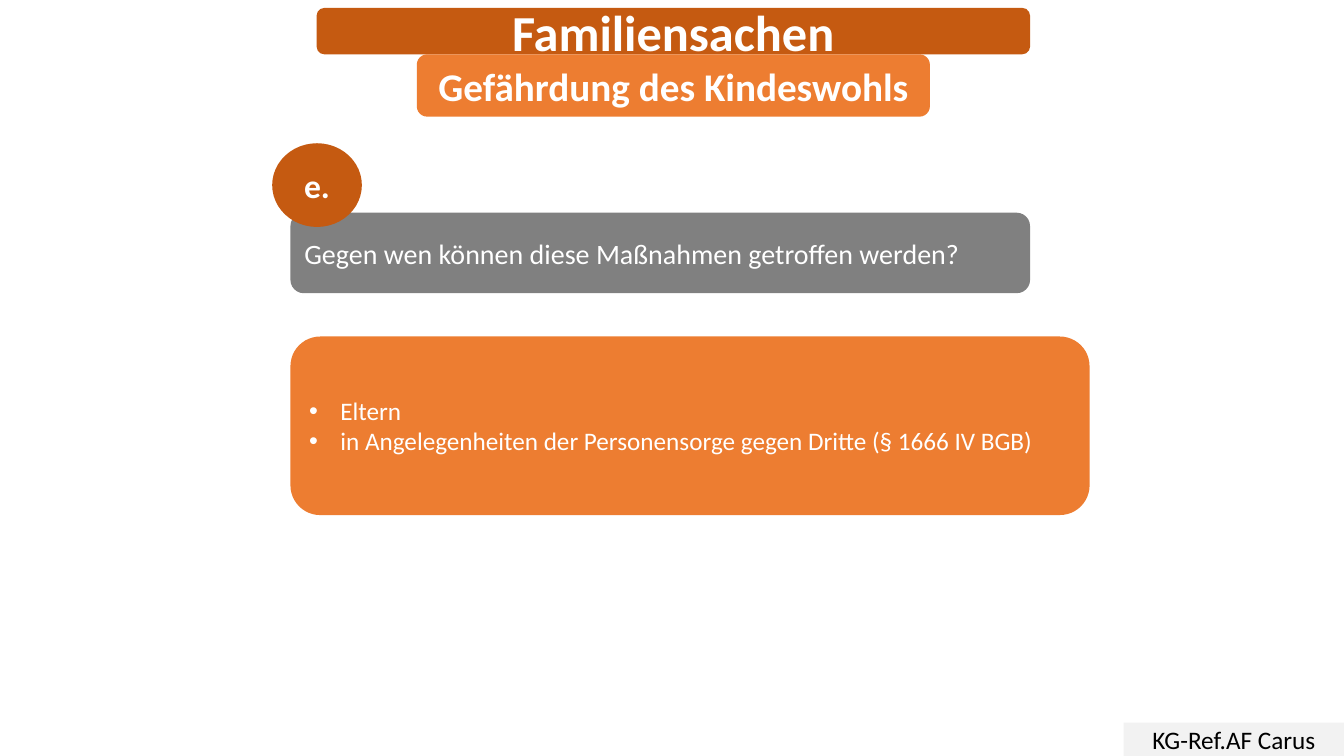
from dataclasses import dataclass

from lxml import etree
from pptx import Presentation
from pptx.dml.color import RGBColor
from pptx.enum.shapes import MSO_SHAPE
from pptx.enum.text import MSO_ANCHOR, PP_ALIGN
from pptx.oxml.ns import qn
from pptx.util import Cm, Pt

ROUNDED = MSO_SHAPE.ROUNDED_RECTANGLE
RECTANGLE = MSO_SHAPE.RECTANGLE
CIRCLE = MSO_SHAPE.FLOWCHART_CONNECTOR
LEFT, CENTER = PP_ALIGN.LEFT, PP_ALIGN.CENTER
MIDDLE = MSO_ANCHOR.MIDDLE


@dataclass(frozen=True)
class Theme:
    font: str = "Calibri"
    dark: str = "C55A11"
    accent: str = "ED7D31"
    gray: str = "808080"
    pale: str = "F2F2F2"
    light_text: str = "FFFFFF"
    dark_text: str = "000000"
    title: int = 36
    subtitle: int = 28
    marker: int = 24
    question: int = 20
    body: int = 18


@dataclass(frozen=True)
class Box:
    """A rectangle in centimetres."""
    left: float
    top: float
    width: float
    height: float


THEME = Theme()
BULLET_INDENT = Cm(0.79)


def add_panel(page, box, kind, fill, lines, size, color=THEME.light_text,
              bold=False, align=CENTER):
    """Add a filled shape without outline, one paragraph per line."""
    panel = page.shapes.add_shape(
        kind, Cm(box.left), Cm(box.top), Cm(box.width), Cm(box.height))
    panel.shadow.inherit = False
    panel.fill.solid()
    panel.fill.fore_color.rgb = RGBColor.from_string(fill)
    panel.line.fill.background()
    frame = panel.text_frame
    frame.word_wrap = True
    frame.vertical_anchor = MIDDLE
    frame.text = "\n".join(lines)
    for para in frame.paragraphs:
        para.alignment = align
        for span in para.runs:
            span.font.name = THEME.font
            span.font.size = Pt(size)
            span.font.bold = bold
            span.font.color.rgb = RGBColor.from_string(color)
    return panel


def add_bullet(para):
    properties = para._p.get_or_add_pPr()
    properties.set("marL", str(BULLET_INDENT))
    properties.set("indent", str(-BULLET_INDENT))
    etree.SubElement(properties, qn("a:buFont")).set("typeface", "Arial")
    etree.SubElement(properties, qn("a:buChar")).set("char", "•")


def add_heading(page, box, title, subtitle):
    """Stack the title bar on a narrower, centred subtitle bar."""
    title_height, subtitle_width = 1.17, 12.93
    add_panel(page, Box(box.left, box.top, box.width, title_height), ROUNDED,
              THEME.dark, [title], THEME.title, bold=True)
    subtitle_box = Box(box.left + (box.width - subtitle_width) / 2,
                       box.top + title_height,
                       subtitle_width, box.height - title_height)
    add_panel(page, subtitle_box, ROUNDED, THEME.accent, [subtitle],
              THEME.subtitle, bold=True)


def add_question(page, box, marker, question):
    """Place a question bar with a round marker over its top left corner."""
    bar_left, bar_top = 0.46, 1.75
    bar = Box(box.left + bar_left, box.top + bar_top,
              box.width - bar_left, box.height - bar_top)
    add_panel(page, bar, ROUNDED, THEME.gray, [question], THEME.question,
              align=LEFT)
    add_panel(page, Box(box.left, box.top, 2.26, 2.11), CIRCLE, THEME.dark,
              [marker], THEME.marker, bold=True)


def add_answer(page, box, points):
    panel = add_panel(page, box, ROUNDED, THEME.accent, points, THEME.body,
                      align=LEFT)
    for para in panel.text_frame.paragraphs:
        add_bullet(para)


def add_footer(page, box, text):
    add_panel(page, box, RECTANGLE, THEME.pale, [text], THEME.body,
              color=THEME.dark_text)


def main():
    deck = Presentation()
    deck.slide_width, deck.slide_height = Cm(33.87), Cm(19.05)
    page = deck.slides.add_slide(deck.slide_layouts[6])
    add_heading(page, Box(7.98, 0.2, 17.98, 2.74),
                "Familiensachen", "Gefährdung des Kindeswohls")
    add_question(page, Box(6.86, 3.61, 19.1, 3.78), "e.",
                 "Gegen wen können diese Maßnahmen getroffen werden?")
    add_answer(page, Box(7.32, 8.48, 20.14, 4.5), [
        "Eltern",
        "in Angelegenheiten der Personensorge gegen Dritte (§ 1666 IV BGB)",
    ])
    add_footer(page, Box(28.32, 18.21, 5.55, 0.84), "KG-Ref.AF Carus")
    deck.save("out.pptx")


if __name__ == "__main__":
    main()
